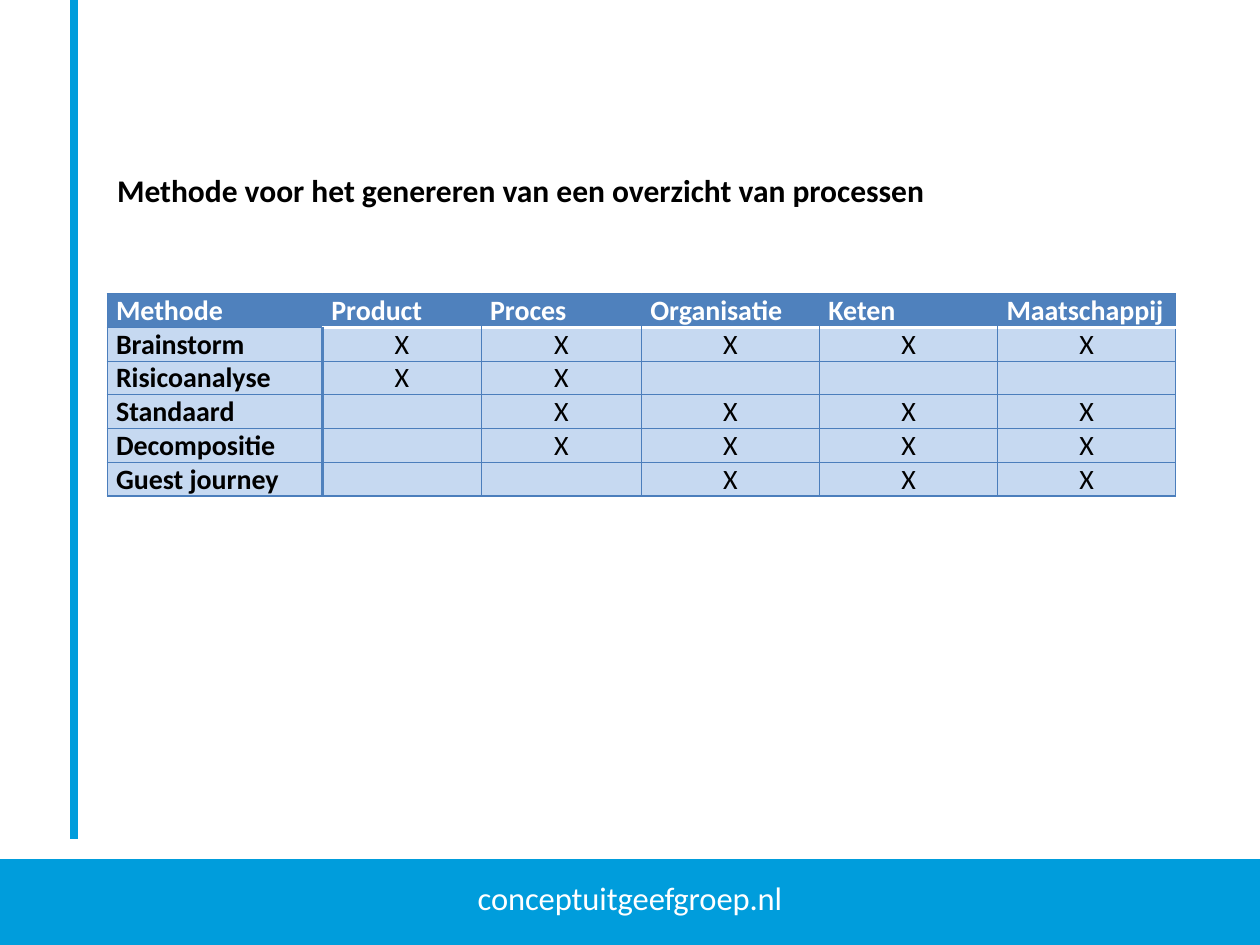
from lxml.etree import SubElement
from pptx import Presentation
from pptx.dml.color import RGBColor
from pptx.enum.shapes import MSO_CONNECTOR, MSO_SHAPE
from pptx.enum.text import MSO_ANCHOR, PP_ALIGN
from pptx.oxml.ns import qn
from pptx.util import Cm, Pt

FONT = "Calibri"
BRIGHT_BLUE = RGBColor(0x00, 0x9D, 0xDC)
HEADER_BLUE = RGBColor(0x4F, 0x81, 0xBD)
GRID_BLUE = RGBColor(0x4B, 0x7E, 0xBC)
PALE_BLUE = RGBColor(0xC6, 0xD9, 0xF1)
WHITE = RGBColor(0xFF, 0xFF, 0xFF)
BLACK = RGBColor(0x00, 0x00, 0x00)

HEADINGS = ["Methode", "Product", "Proces", "Organisatie", "Keten", "Maatschappij"]
METHODS = {
    "Brainstorm": "XXXXX",
    "Risicoanalyse": "XX---",
    "Standaard": "-XXXX",
    "Decompositie": "-XXXX",
    "Guest journey": "--XXX",
}
COLUMN_WIDTHS = [4.34, 3.2, 3.23, 3.59, 3.59, 3.59]
ROW_HEIGHT = 0.68


def style_text(paragraph, size, color, bold=False):
    for span in paragraph.runs:
        span.font.name = FONT
        span.font.size = Pt(size)
        span.font.bold = bold
        span.font.color.rgb = color


def set_border(cell, side, color, points):
    """Draw one cell edge; call in the order L, R, T, B and before the fill."""
    edge = SubElement(cell._tc.get_or_add_tcPr(), qn(f"a:ln{side}"), w=str(Pt(points)))
    fill = SubElement(edge, qn("a:solidFill"))
    SubElement(fill, qn("a:srgbClr"), val=str(color))


deck = Presentation()
deck.slide_width, deck.slide_height = Cm(25.4), Cm(19.05)
page = deck.slides.add_slide(deck.slide_layouts[6])

# Footer band and vertical rule
footer = page.shapes.add_shape(MSO_SHAPE.RECTANGLE, 0, Cm(17.32), Cm(25.4), Cm(1.73))
footer.shadow.inherit = False
footer.fill.solid()
footer.fill.fore_color.rgb = BRIGHT_BLUE
footer.line.fill.background()
footer.text_frame.text = "conceptuitgeefgroep.nl"
footer.text_frame.vertical_anchor = MSO_ANCHOR.BOTTOM
address = footer.text_frame.paragraphs[0]
address.alignment = PP_ALIGN.CENTER
style_text(address, 32, WHITE)
address.runs[0]._r.get_or_add_rPr().set("baseline", "30000")

rule = page.shapes.add_connector(MSO_CONNECTOR.STRAIGHT, Cm(1.5), 0, Cm(1.5), Cm(16.92))
rule.line.color.rgb = BRIGHT_BLUE
rule.line.width = Pt(4.5)
SubElement(rule._element.spPr, qn("a:effectLst"))

# Title
title = page.shapes.add_textbox(Cm(2.11), Cm(3.33), Cm(22.4), Cm(1.02))
title.text_frame.word_wrap = True
title.text_frame.text = "Methode voor het genereren van een overzicht van processen"
style_text(title.text_frame.paragraphs[0], 18, BLACK, bold=True)

# Table of methods
rows = [HEADINGS] + [[name, *marks.replace("-", " ")] for name, marks in METHODS.items()]
table = page.shapes.add_table(
    len(rows), len(HEADINGS), Cm(2.16), Cm(5.92),
    Cm(sum(COLUMN_WIDTHS)), Cm(ROW_HEIGHT * len(rows)),
).table
for column, width in zip(table.columns, COLUMN_WIDTHS):
    column.width = Cm(width)

last_column = len(HEADINGS) - 1
for row_index, row in enumerate(rows):
    table.rows[row_index].height = Cm(ROW_HEIGHT)
    is_header = row_index == 0
    for column_index, wording in enumerate(row):
        cell = table.cell(row_index, column_index)
        is_label = column_index == 0
        cell.margin_left = cell.margin_right = Cm(0.18)
        cell.margin_top = cell.margin_bottom = 0
        cell.text = wording.strip()
        paragraph = cell.text_frame.paragraphs[0]
        style_text(paragraph, 16, WHITE if is_header else BLACK, bold=is_header or is_label)
        if not paragraph.runs:
            SubElement(paragraph._p, qn("a:endParaRPr"), sz="1600")
        if not is_header and not is_label:
            paragraph.alignment = PP_ALIGN.CENTER

        grid = (GRID_BLUE, 0.75)
        inner = (HEADER_BLUE, 0.75) if is_header else grid
        divider = inner if is_header else (HEADER_BLUE, 2)
        under_header = grid if is_label else (WHITE, 2)
        set_border(cell, "L", *(divider if column_index == 1 else grid if is_label else inner))
        set_border(cell, "R", *(divider if is_label else grid if column_index == last_column else inner))
        set_border(cell, "T", *(under_header if row_index == 1 else grid))
        set_border(cell, "B", *(under_header if is_header else grid))
        cell.fill.solid()
        cell.fill.fore_color.rgb = HEADER_BLUE if is_header else PALE_BLUE

deck.save("out.pptx")
